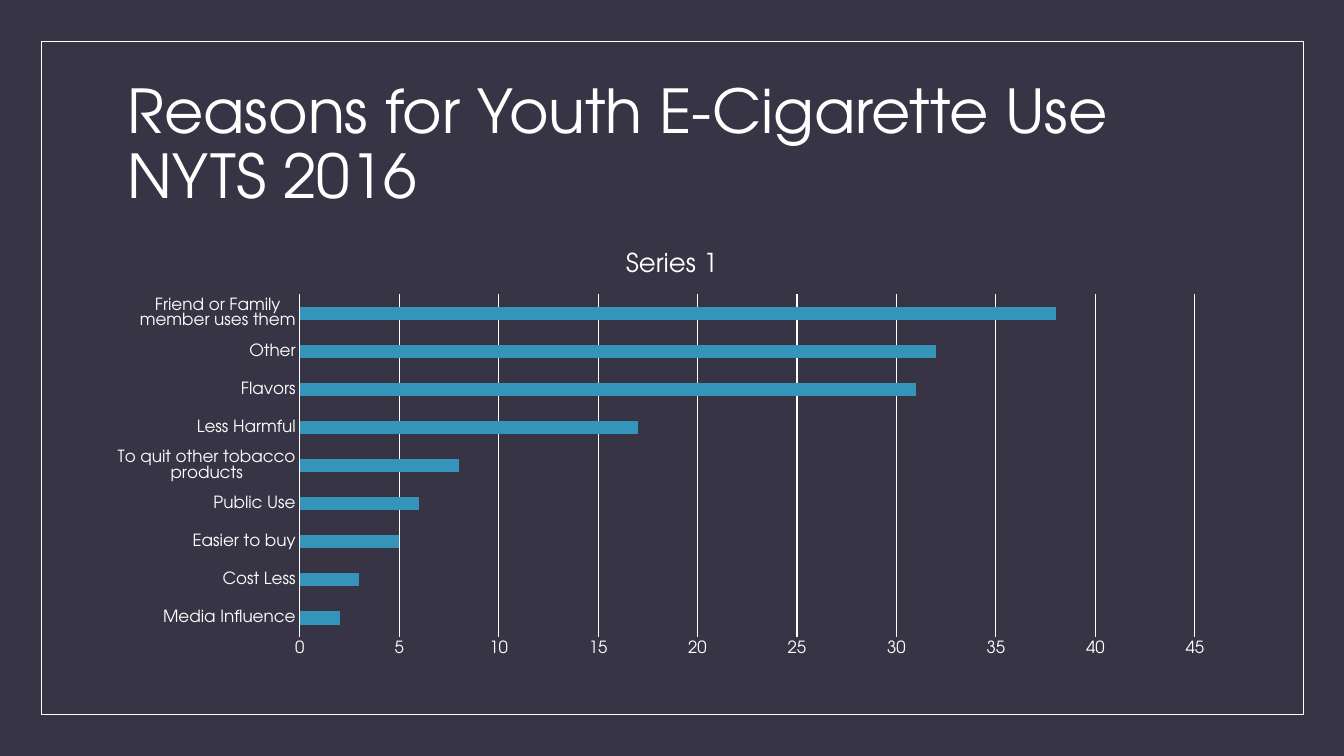
from pptx import Presentation
from pptx.chart.data import CategoryChartData
from pptx.dml.color import RGBColor
from pptx.enum.chart import XL_CHART_TYPE, XL_TICK_MARK
from pptx.enum.shapes import MSO_SHAPE
from pptx.enum.text import MSO_ANCHOR, MSO_AUTO_SIZE, PP_ALIGN
from pptx.util import Pt

TITLE = "Reasons for Youth E-Cigarette Use NYTS 2016"
SERIES = "Series 1"
REASONS = [
    ("Media Influence", 2),
    ("Cost Less", 3),
    ("Easier to buy", 5),
    ("Public Use", 6),
    ("To quit other tobacco products", 8),
    ("Less Harmful", 17),
    ("Flavors", 31),
    ("Other", 32),
    ("Friend or Family member uses them", 38),
]
FONT = "TeX Gyre Adventor"
WHITE, NAVY, BLUE = "FFFFFF", "373545", "3494BA"
WIDTH, HEIGHT = 960, 540
FRAME_MARGIN = 29.5
FRAME_WIDTH, FRAME_HEIGHT = 901.5, 481
LEFT, BODY_WIDTH = 84, 792
TITLE_TOP, TITLE_HEIGHT = 50.4, 108
CHART_TOP, CHART_HEIGHT = 165.6, 309.6


def color(value):
    return RGBColor.from_string(value)


def style_font(font, size):
    font.name = FONT
    font.size = Pt(size)
    font.bold = False
    font.color.rgb = color(WHITE)


def style_line(line, width):
    line.color.rgb = color(WHITE)
    line.width = Pt(width)


def add_frame(s):
    sp = s.shapes.add_shape(
        MSO_SHAPE.RECTANGLE, Pt(FRAME_MARGIN), Pt(FRAME_MARGIN),
        Pt(FRAME_WIDTH), Pt(FRAME_HEIGHT))
    sp.shadow.inherit = False
    sp.fill.background()
    style_line(sp.line, 0.5)


def add_title(s):
    sp = s.shapes.title
    sp.left, sp.top = Pt(LEFT), Pt(TITLE_TOP)
    sp.width, sp.height = Pt(BODY_WIDTH), Pt(TITLE_HEIGHT)
    tf = sp.text_frame
    tf.word_wrap = True
    tf.auto_size = MSO_AUTO_SIZE.NONE
    tf.vertical_anchor = MSO_ANCHOR.MIDDLE
    p = tf.paragraphs[0]
    p.alignment = PP_ALIGN.LEFT
    p.line_spacing = 0.9
    r = p.add_run()
    r.text = TITLE
    style_font(r.font, 43.2)


def add_reasons_chart(s):
    data = CategoryChartData()
    data.categories = [reason for reason, _ in REASONS]
    data.add_series(SERIES, [share for _, share in REASONS])
    chart = s.shapes.add_chart(
        XL_CHART_TYPE.BAR_CLUSTERED, Pt(LEFT), Pt(CHART_TOP),
        Pt(BODY_WIDTH), Pt(CHART_HEIGHT), data).chart
    style_font(chart.font, 10)
    chart.has_legend = False
    chart.has_title = True
    r = chart.chart_title.text_frame.paragraphs[0].add_run()
    r.text = SERIES
    style_font(r.font, 18.6)
    chart.chart_title.include_in_layout = False

    for axis in (chart.category_axis, chart.value_axis):
        axis.major_tick_mark = XL_TICK_MARK.NONE
        axis.minor_tick_mark = XL_TICK_MARK.NONE
        style_font(axis.tick_labels.font, 12)
    style_line(chart.category_axis.format.line, 0.75)
    values = chart.value_axis
    values.minimum_scale, values.maximum_scale, values.major_unit = 0, 45, 5
    values.tick_labels.number_format = "0"
    values.tick_labels.number_format_is_linked = False
    values.format.line.fill.background()
    values.has_major_gridlines = True
    style_line(values.major_gridlines.format.line, 0.75)

    plot = chart.plots[0]
    plot.gap_width = 182
    plot.vary_by_categories = False
    fill = plot.series[0].format.fill
    fill.solid()
    fill.fore_color.rgb = color(BLUE)


def main():
    prs = Presentation()
    prs.slide_width, prs.slide_height = Pt(WIDTH), Pt(HEIGHT)
    s = prs.slides.add_slide(prs.slide_layouts[5])
    s.background.fill.solid()
    s.background.fill.fore_color.rgb = color(NAVY)
    add_frame(s)
    add_title(s)
    add_reasons_chart(s)
    prs.save("out.pptx")


if __name__ == "__main__":
    main()
